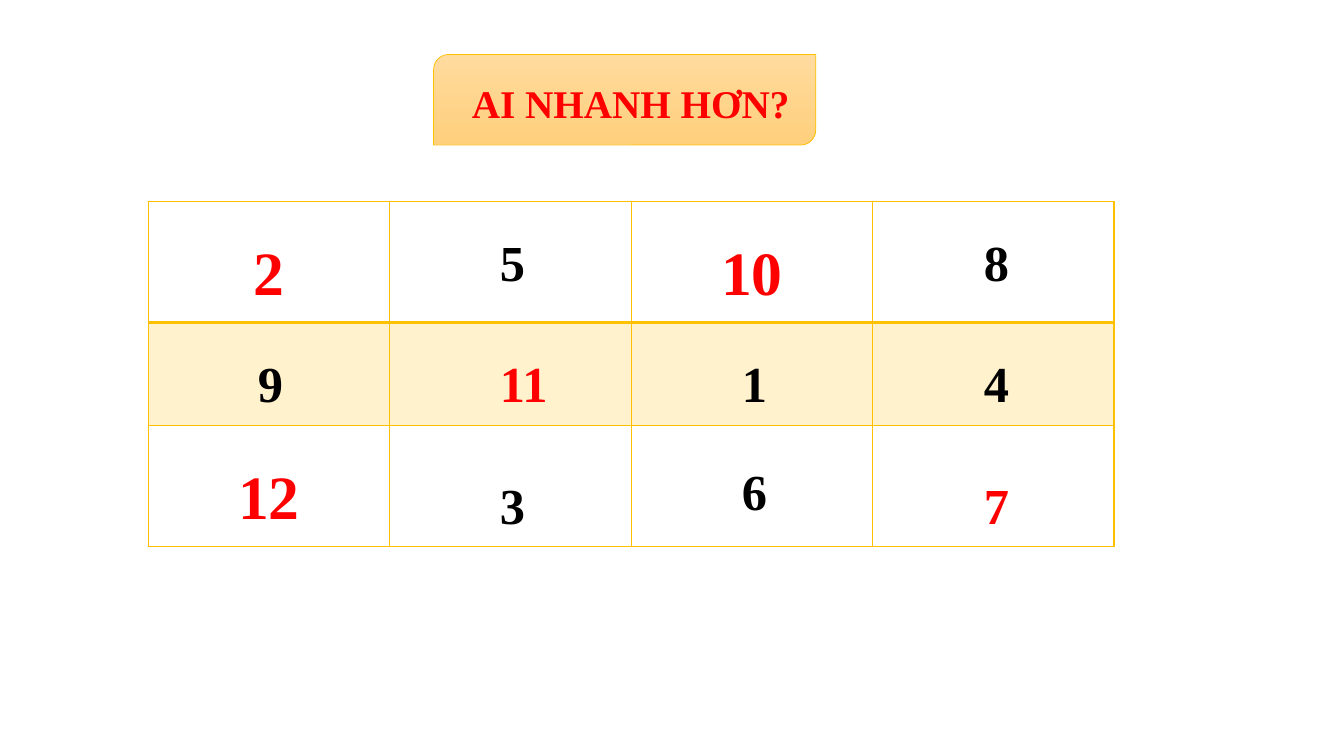
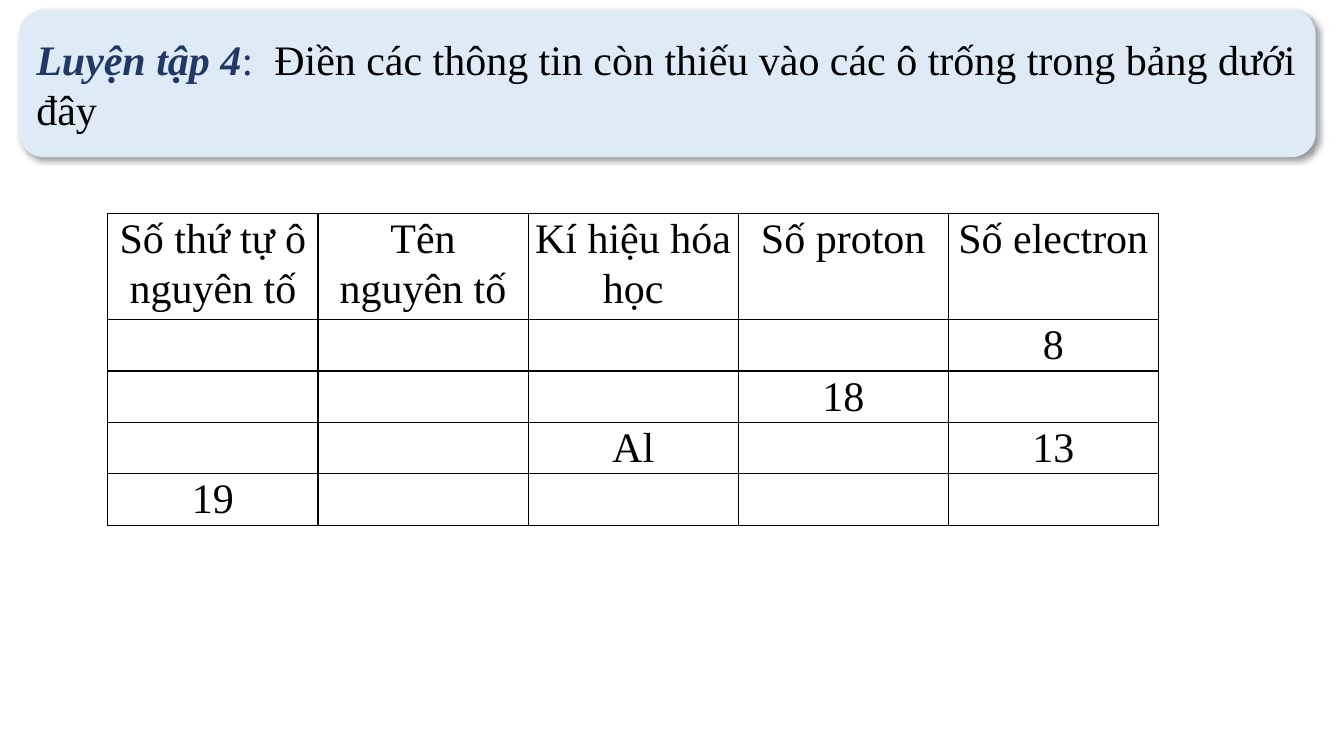
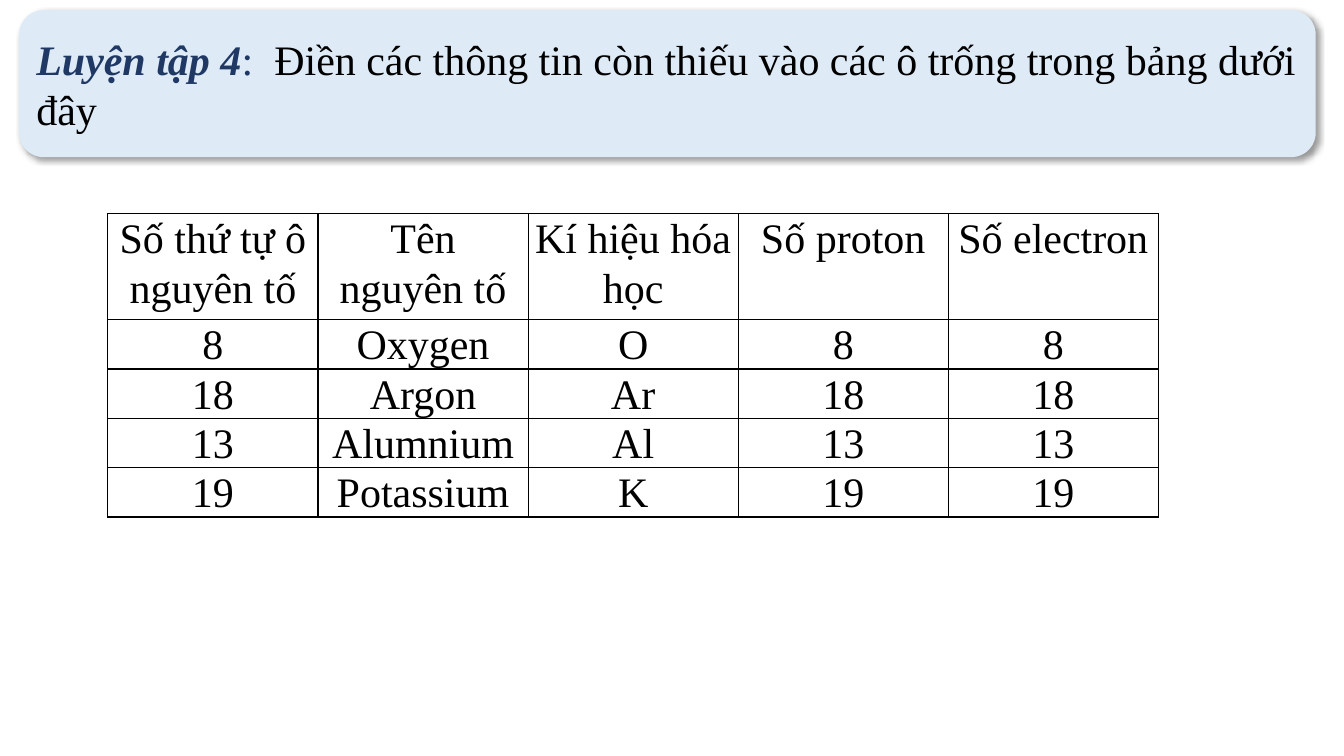
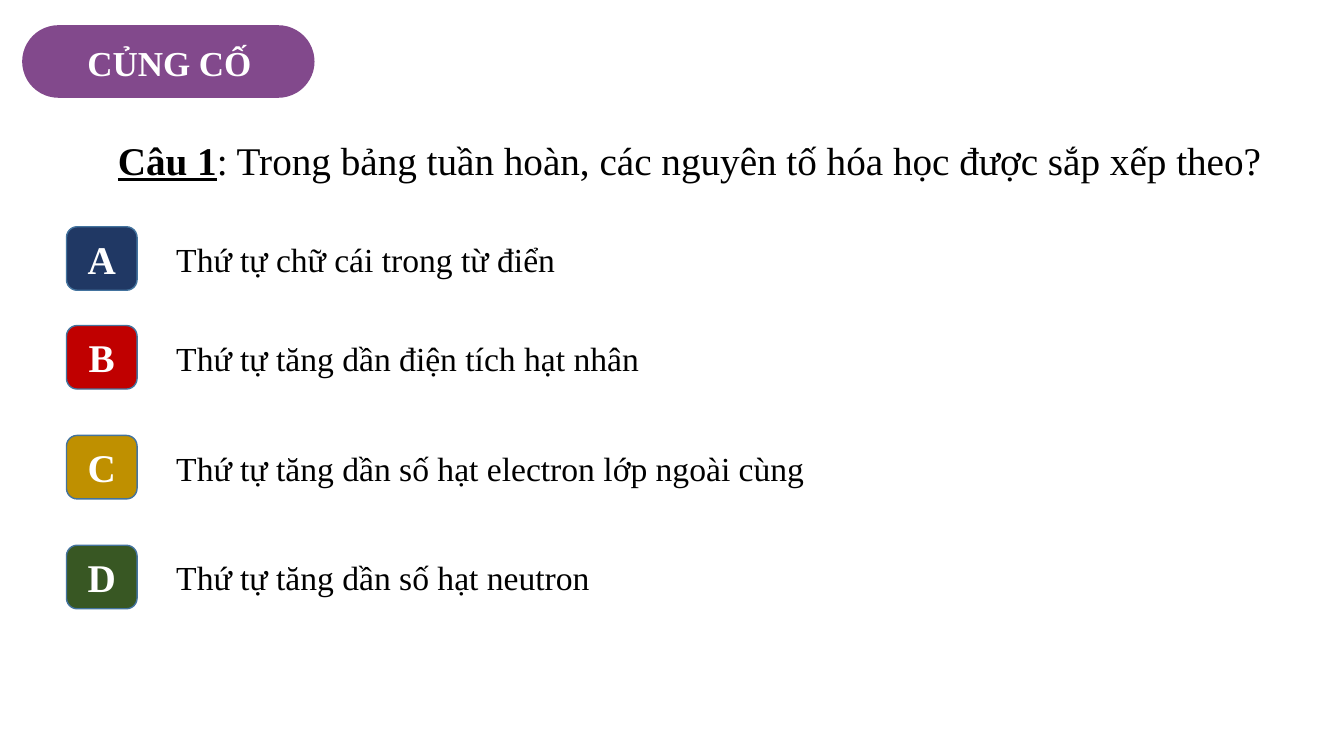
from dataclasses import dataclass

from lxml import etree
from pptx import Presentation, util as u
from pptx.dml.color import RGBColor
from pptx.enum import shapes, text
from pptx.oxml import ns


@dataclass(frozen=True)
class Theme:
    font: str = "Times New Roman"
    black: str = "000000"
    white: str = "FFFFFF"
    red: str = "FF0000"
    navy: str = "203864"
    gold: str = "FFC000"
    pale_gold: str = "FFF2CC"
    gold_top: str = "FFDB9E"
    gold_bottom: str = "FFD07C"
    pale_blue: str = "DEEBF7"
    purple: str = "82498C"
    badge_line: str = "43739E"
    big: int = 44
    number: int = 36
    exercise: int = 30
    heading: int = 28
    pill: int = 25
    answer: int = 24


THEME = Theme()
SHAPE = shapes.MSO_SHAPE
CENTER = text.PP_ALIGN.CENTER
MIDDLE = text.MSO_ANCHOR.MIDDLE

# Slide 1: numbers set in the cells, and numbers laid over the grid
GAME_TITLE = "AI NHANH HƠN?"
GAME_CELLS = [["2", "", "10", ""], ["", "", "", ""], ["12", "", "", ""]]
# text, column, row, colour, vertical shift
GAME_NUMBERS = [
    ("5", 1, 0, THEME.black, 0),
    ("8", 3, 0, THEME.black, 0),
    ("4", 3, 1, THEME.black, 0),
    ("7", 3, 2, THEME.red, 0),
    ("3", 1, 2, THEME.black, 0),
    ("11", 1, 1, THEME.red, 0),
    ("6", 2, 2, THEME.black, -0.13),
    ("1", 2, 1, THEME.black, 0),
    ("9", 0, 1, THEME.black, 0),
]

# Slides 2 and 3: the exercise and its solution
EXERCISE_LABEL = "Luyện tập 4"
EXERCISE_TASK = "Điền các thông tin còn thiếu vào các ô trống trong bảng dưới đây"
ELEMENT_HEADER = ["Số thứ tự ô nguyên tố", "Tên nguyên tố", "Kí hiệu hóa học",
                  "Số proton", "Số electron"]
EXERCISE_ROWS = [
    ["", "", "", "", "8"],
    ["", "", "", "18", ""],
    ["", "", "Al", "", "13"],
    ["19", "", "", "", ""],
]
SOLUTION_ROWS = [
    ["8", "Oxygen", "O", "8", "8"],
    ["18", "Argon", "Ar", "18", "18"],
    ["13", "Alumnium", "Al", "13", "13"],
    ["19", "Potassium", "K", "19", "19"],
]

# Slide 4: the question; letter, badge colour, top, answer
QUIZ_TITLE = "CỦNG CỐ"
QUESTION_LABEL = "Câu 1"
QUESTION = ": Trong bảng tuần hoàn, các nguyên tố hóa học được sắp xếp theo?"
ANSWERS = [
    ("A", THEME.navy, 2.25, "Thứ tự chữ cái trong từ điển"),
    ("B", "C00000", 3.23, "Thứ tự tăng dần điện tích hạt nhân"),
    ("C", "BF9000", 4.32, "Thứ tự tăng dần số hạt electron lớp ngoài cùng"),
    ("D", "385723", 5.41, "Thứ tự tăng dần số hạt neutron"),
]


def color(value):
    return RGBColor.from_string(value)


def inches(box):
    return [u.Inches(length) for length in box]


def add_run(paragraph, words, size, fill, bold=False, italic=False, underline=False):
    run = paragraph.add_run()
    run.text = words
    font = run.font
    font.name, font.size, font.color.rgb = THEME.font, u.Pt(size), color(fill)
    font.bold, font.italic, font.underline = bold, italic, underline


def set_frame(shape, align=None, anchor=text.MSO_ANCHOR.TOP):
    """Prepare the text frame of a shape and return its first paragraph."""
    frame = shape.text_frame
    frame.word_wrap = True
    frame.auto_size = text.MSO_AUTO_SIZE.NONE
    frame.vertical_anchor = anchor
    paragraph = frame.paragraphs[0]
    paragraph.alignment = align or text.PP_ALIGN.LEFT
    return paragraph


def add_text(slide, box):
    return set_frame(slide.shapes.add_textbox(*inches(box)))


def add_shape(slide, kind, box, fill=None, line=None, line_width=1):
    shape = slide.shapes.add_shape(kind, *inches(box))
    shape.shadow.inherit = False
    if fill:
        shape.fill.solid()
        shape.fill.fore_color.rgb = color(fill)
    if line:
        shape.line.color.rgb = color(line)
        shape.line.width = u.Pt(line_width)
    else:
        shape.line.fill.background()
    return shape


def place_title(slide, box, align=None, anchor=text.MSO_ANCHOR.TOP):
    """Move the title in front of its band and return its paragraph."""
    title = slide.shapes.title
    title.left, title.top, title.width, title.height = inches(box)
    slide.shapes.element.append(title.element)
    return set_frame(title, align, anchor)


def add_drop_shadow(shape):
    effects = shape.element.spPr.find(ns.qn("a:effectLst"))
    shadow = etree.SubElement(effects, ns.qn("a:outerShdw"), blurRad=str(u.Pt(4)),
                              dist=str(u.Pt(3)), dir=str(45 * 60000), algn="tl",
                              rotWithShape="0")
    tint = etree.SubElement(shadow, ns.qn("a:srgbClr"), val=THEME.black)
    etree.SubElement(tint, ns.qn("a:alpha"), val="40000")


def set_borders(cell, fill, top=1, bottom=1):
    properties = cell._tc.get_or_add_tcPr()
    widths = {"lnL": 1, "lnR": 1, "lnT": top, "lnB": bottom}
    for index, (side, width) in enumerate(widths.items()):
        line = etree.Element(ns.qn(f"a:{side}"), w=str(u.Pt(width)))
        solid = etree.SubElement(line, ns.qn("a:solidFill"))
        etree.SubElement(solid, ns.qn("a:srgbClr"), val=fill)
        properties.insert(index, line)


def add_table(slide, left, top, width, heights, rows):
    """Add a plain table with equal columns."""
    columns = len(rows[0])
    frame = slide.shapes.add_table(len(rows), columns,
                                   *inches((left, top, width, sum(heights))))
    table = frame.table
    table.first_row = table.horz_banding = False
    for column in table.columns:
        column.width = u.Inches(width / columns)
    for row, height in zip(table.rows, heights):
        row.height = u.Inches(height)
    for cell in table.iter_cells():
        cell.fill.background()
    return table


def fill_cell(cell, words, size, fill, spacing, bold=False):
    paragraph = cell.text_frame.paragraphs[0]
    paragraph.alignment = CENTER
    paragraph.line_spacing = spacing
    if words:
        add_run(paragraph, words, size, fill, bold)


def build_game(slide):
    band = add_shape(slide, SHAPE.ROUND_2_DIAG_RECTANGLE, (4.3, 0.54, 3.79, 0.9),
                     line=THEME.gold, line_width=0.5)
    band.fill.gradient()
    band.fill.gradient_angle = 270
    for stop, value in zip(band.fill.gradient_stops, (THEME.gold_top, THEME.gold_bottom)):
        stop.color.rgb = color(value)
    title = place_title(slide, (4.58, 0.74, 3.63, 0.57))
    add_run(title, GAME_TITLE, THEME.heading, THEME.red, bold=True)

    table = add_table(slide, 1.47, 2, 9.58, (1.2, 1.02, 1.2), GAME_CELLS)
    for r, row in enumerate(GAME_CELLS):
        for c, words in enumerate(row):
            cell = table.cell(r, c)
            if r == 1:
                cell.fill.solid()
                cell.fill.fore_color.rgb = color(THEME.pale_gold)
            set_borders(cell, THEME.gold, top=2 if r == 1 else 1, bottom=2 if r == 0 else 1)
            fill_cell(cell, words, THEME.big, THEME.red, 1.5 if words else 1, bold=True)

    for words, column, row, fill, shift in GAME_NUMBERS:
        box = (2.46 + 2.4 * column, 2.24 + 1.205 * row + shift,
               0.34 + 0.21 * len(words), 0.71)
        add_run(add_text(slide, box), words, THEME.number, fill, bold=True)


def build_exercise(slide, rows, row_height):
    left, top, width, height = 0.19, 0.1, 12.86, 1.46
    corner = 0.07
    band = add_shape(slide, SHAPE.ROUNDED_RECTANGLE, (left, top, width, height),
                     THEME.pale_blue)
    add_drop_shadow(band)
    title = place_title(slide, (left + corner, top, width - 2 * corner, height),
                        anchor=MIDDLE)
    add_run(title, EXERCISE_LABEL, THEME.exercise, THEME.navy, bold=True, italic=True)
    add_run(title, ":  ", THEME.exercise, THEME.navy)
    add_run(title, EXERCISE_TASK, THEME.exercise, THEME.black)

    content = [ELEMENT_HEADER] + rows
    heights = [1.05] + [row_height] * len(rows)
    table = add_table(slide, 1.07, 2.12, 10.42, heights, content)
    for r, row in enumerate(content):
        for c, words in enumerate(row):
            cell = table.cell(r, c)
            cell.margin_left = cell.margin_right = u.Inches(0.07)
            cell.margin_top = cell.margin_bottom = 0
            set_borders(cell, THEME.black)
            fill_cell(cell, words, THEME.exercise, THEME.black, 1.06)


def build_quiz(slide):
    pill = add_shape(slide, SHAPE.ROUNDED_RECTANGLE, (0.22, 0.25, 2.9, 0.72), THEME.purple)
    pill.adjustments[0] = 0.5
    title = place_title(slide, (0.66, 0.36, 2.04, 0.94), CENTER)
    add_run(title, QUIZ_TITLE, THEME.pill, THEME.white, bold=True)

    question = add_text(slide, (1.07, 1.3, 11.66, 0.57))
    add_run(question, QUESTION_LABEL, THEME.heading, THEME.black, bold=True, underline=True)
    add_run(question, QUESTION, THEME.heading, THEME.black)

    for letter, fill, top, answer in ANSWERS:
        badge = add_shape(slide, SHAPE.ROUNDED_RECTANGLE, (0.66, top, 0.7, 0.63),
                          fill, THEME.badge_line)
        add_run(set_frame(badge, CENTER, MIDDLE), letter, THEME.heading, THEME.white, bold=True)
        add_run(add_text(slide, (1.65, top + 0.07, 6.56, 0.5)), answer,
                THEME.answer, THEME.black)


def main():
    presentation = Presentation()
    presentation.slide_width, presentation.slide_height = inches((13.33, 7.5))
    title_only = presentation.slide_layouts.get_by_name("Title Only")

    def new_slide():
        return presentation.slides.add_slide(title_only)

    build_game(new_slide())
    build_exercise(new_slide(), EXERCISE_ROWS, 0.51)
    build_exercise(new_slide(), SOLUTION_ROWS, 0.49)
    build_quiz(new_slide())
    presentation.save("out.pptx")


if __name__ == "__main__":
    main()
